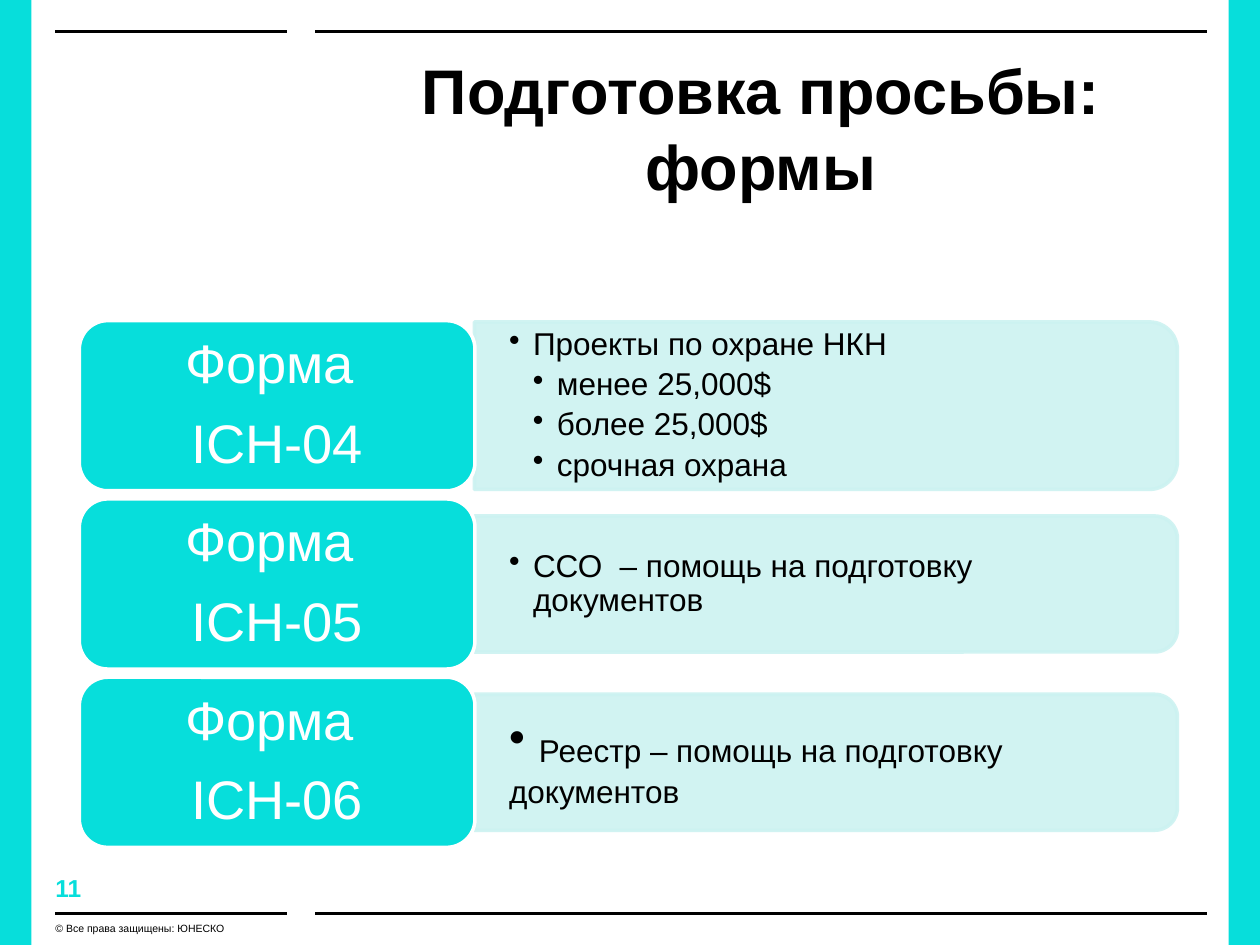
from dataclasses import dataclass
from typing import NamedTuple

from lxml.etree import SubElement
from pptx import Presentation
from pptx.dml.color import RGBColor
from pptx.enum.shapes import MSO_CONNECTOR, MSO_SHAPE
from pptx.enum.text import MSO_ANCHOR as Anchor, PP_ALIGN as Align
from pptx.oxml.ns import qn
from pptx.util import Inches, Pt

COLORS = {"accent": "07DEDB", "panel": "CCF2F1", "ink": "000000", "paper": "FFFFFF"}
FONT = "Arial"

# The slide is a grid of 100 columns by 75 rows
COLUMNS, ROWS = 100, 75
presentation = Presentation()
presentation.slide_width, presentation.slide_height = Inches(10), Inches(7.5)
COLUMN = presentation.slide_width / COLUMNS
ROW = presentation.slide_height / ROWS
slide = presentation.slides.add_slide(presentation.slide_layouts[6])


class Area(NamedTuple):
    left: float
    top: float
    width: float
    height: float

    def lengths(self) -> tuple:
        return tuple(round(value * unit) for value, unit in zip(self, (COLUMN, ROW) * 2))


class Bullet(NamedTuple):
    text: str
    level: int = 1


@dataclass
class Form:
    name: str
    bullets: list
    panel_height: float = 10.8
    text_height: float = 9.7
    large_bullet: bool = False


def color(name: str) -> RGBColor:
    return RGBColor.from_string(COLORS[name])


def set_font(font, size: float, color_name: str, bold: bool = False) -> None:
    font.name, font.size, font.bold = FONT, Pt(size), bold
    font.color.rgb = color(color_name)


def set_frame(frame, margin_x: float = 0, margin_y: float = 0, anchor=Anchor.TOP) -> None:
    frame.word_wrap = True
    frame.vertical_anchor = anchor
    frame.margin_left = frame.margin_right = Inches(margin_x)
    frame.margin_top = frame.margin_bottom = Inches(margin_y)


def add_text(area: Area, text: str, size: float, color_name: str = "ink",
             bold: bool = False, align=Align.LEFT) -> None:
    frame = slide.shapes.add_textbox(*area.lengths()).text_frame
    set_frame(frame)
    paragraph = frame.paragraphs[0]
    paragraph.text, paragraph.alignment = text, align
    set_font(paragraph.font, size, color_name, bold)


def add_box(kind, area: Area, fill: str, line: str | None = None):
    shape = slide.shapes.add_shape(kind, *area.lengths())
    shape.shadow.inherit = False
    shape.fill.solid()
    shape.fill.fore_color.rgb = color(fill)
    if line:
        shape.line.color.rgb, shape.line.width = color(line), Pt(2)
    else:
        shape.line.fill.background()
    return shape


def add_rule(left: float, right: float, row: float) -> None:
    x1, y, x2, _ = Area(left, row, right, 0).lengths()
    rule = slide.shapes.add_connector(MSO_CONNECTOR.STRAIGHT, x1, y, x2, y)
    rule.line.color.rgb, rule.line.width = color("ink"), Pt(2)
    SubElement(rule._element.spPr, qn("a:effectLst"))


def add_bullet(paragraph, margin: float, hanging: float) -> None:
    properties = paragraph._p.get_or_add_pPr()
    properties.set("marL", str(Inches(margin)))
    properties.set("indent", str(-Inches(hanging)))
    SubElement(properties, qn("a:buChar"), char="•")


def add_panel(form: Form, middle: float) -> None:
    # A turned shape keeps its centre, so its width is the panel's height
    center, length, depth = 65.55, 55.8, form.panel_height
    area = Area(center - depth / 2, middle - length / 2, depth, length)
    panel = add_box(MSO_SHAPE.ROUND_2_SAME_RECTANGLE, area, "panel", "panel")
    panel.rotation = 90
    for solid in panel._element.spPr.iter(qn("a:solidFill")):
        SubElement(solid[0], qn("a:alpha"), val="90000")

    text_area = Area(37.7, middle - form.text_height / 2, 55.2, form.text_height)
    frame = slide.shapes.add_textbox(*text_area.lengths()).text_frame
    set_frame(frame, 0.27, 0.14, Anchor.MIDDLE)
    for index, bullet in enumerate(form.bullets):
        paragraph = frame.add_paragraph() if index else frame.paragraphs[0]
        if form.large_bullet:
            add_bullet(paragraph, 0, 0)
            for text, size in ((" ", 27), (bullet.text, 18)):
                run = paragraph.add_run()
                run.text = text
                set_font(run.font, size, "ink")
        else:
            paragraph.text = bullet.text
            paragraph.level = bullet.level
            paragraph.line_spacing, paragraph.space_after = 0.9, Pt(3.5)
            add_bullet(paragraph, 0.19 * bullet.level, 0.19)
            set_font(paragraph.font, 18, "ink")


def add_label(form: Form, middle: float) -> None:
    height = 13.5
    label = add_box(MSO_SHAPE.ROUNDED_RECTANGLE,
                    Area(6.3, middle - height / 2, 31.4, height), "accent", "paper")
    frame = label.text_frame
    set_frame(frame, 0.13, 0.06, Anchor.MIDDLE)
    for index, text in enumerate(("Форма ", form.name)):
        paragraph = frame.add_paragraph() if index else frame.paragraphs[0]
        paragraph.text, paragraph.alignment = text, Align.CENTER
        paragraph.line_spacing, paragraph.space_after = 0.9, Pt(12)
        set_font(paragraph.font, 31, "paper")


# Side bars and rules
BAR = 2.5
for bar_left in (0, COLUMNS - BAR):
    add_box(MSO_SHAPE.RECTANGLE, Area(bar_left, 0, BAR, ROWS), "accent")
for rule_row in (BAR, ROWS - BAR):
    add_rule(4.4, 22.8, rule_row)
    add_rule(25, 95.8, rule_row)

# Title, slide number and copyright line
add_text(Area(25, 4.1, 70.8, 12.1), "Подготовка просьбы: формы", 36,
         bold=True, align=Align.CENTER)
add_text(Area(4.4, 69.3, 11.4, 2.4), "11", 14, "accent", bold=True)
add_text(Area(4.4, 73.2, 18.3, 1.8), "© Все права защищены: ЮНЕСКО", 6)

# Forms, one row each
FORMS = [
    Form("ICH-04", [Bullet("Проекты по охране НКН"), Bullet("менее 25,000$", 2),
                    Bullet("более 25,000$", 2), Bullet("срочная охрана", 2)],
         panel_height=13.3, text_height=12),
    Form("ICH-05", [Bullet("ССО  – помощь на подготовку документов")]),
    Form("ICH-06", [Bullet("Реестр – помощь на подготовку документов")],
         large_bullet=True),
]
FIRST_MIDDLE, PITCH = 32.2, 14.15
for position, form in enumerate(FORMS):
    row_middle = FIRST_MIDDLE + position * PITCH
    add_panel(form, row_middle)
    add_label(form, row_middle)

presentation.save("out.pptx")
